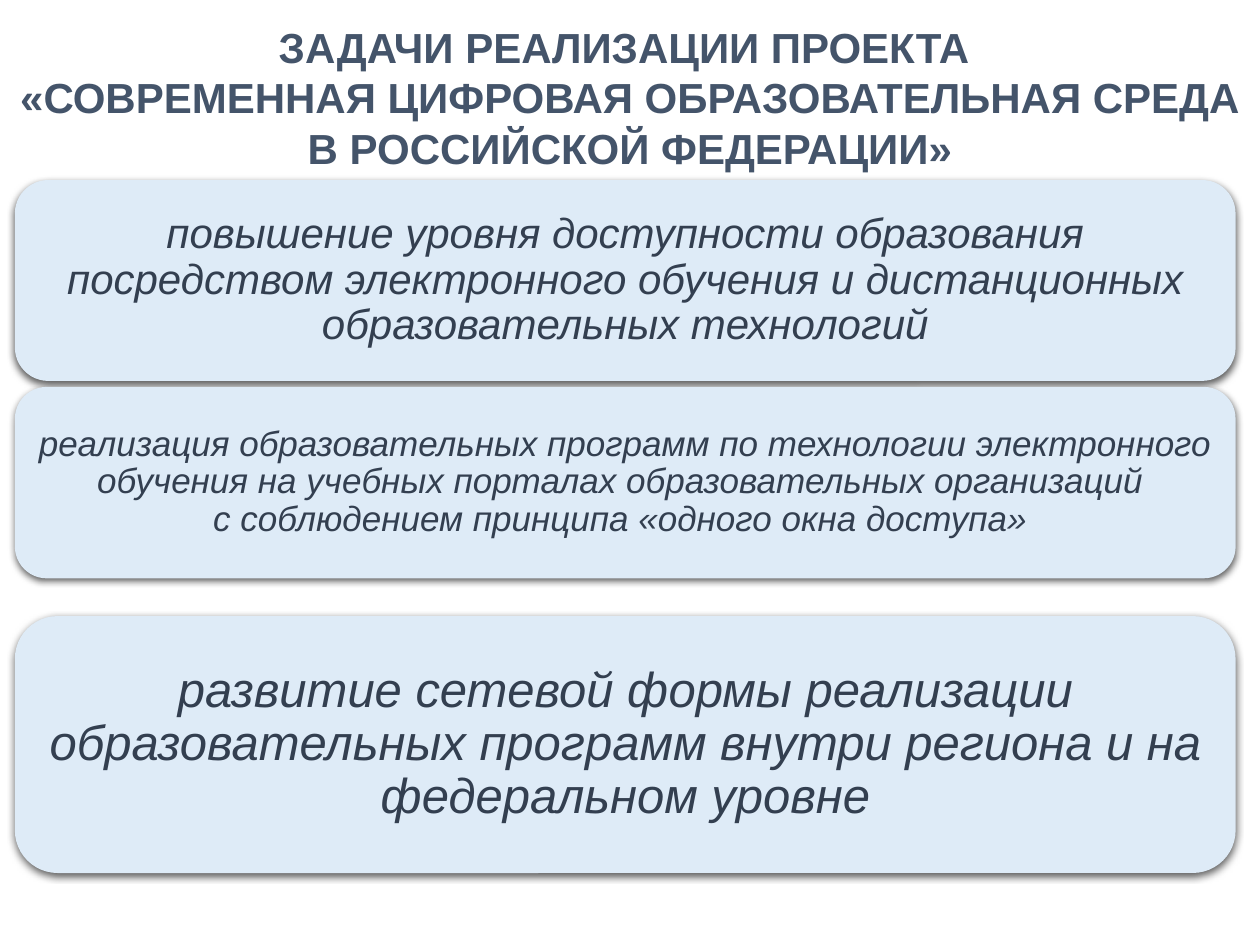
from copy import deepcopy

from lxml.etree import SubElement
from pptx import Presentation
from pptx.dml.color import RGBColor
from pptx.enum.shapes import MSO_SHAPE
from pptx.enum.text import MSO_ANCHOR, MSO_AUTO_SIZE, PP_ALIGN
from pptx.oxml.ns import qn
from pptx.util import Cm, Pt


def write(shape, text, size, color, bold=False, italic=False, inset=0.25,
          spacing=1.0, anchor=MSO_ANCHOR.MIDDLE):
    """Fill a shape with one centred paragraph; a vertical tab breaks a line."""
    frame = shape.text_frame
    frame.word_wrap = True
    frame.vertical_anchor = anchor
    frame.margin_left = frame.margin_right = Cm(inset)
    frame.margin_top = frame.margin_bottom = Cm(min(inset, 0.3))
    para = frame.paragraphs[0]
    para.text = text
    para.alignment = PP_ALIGN.CENTER
    para.line_spacing = spacing
    for run in para.runs:
        font = run.font
        font.name, font.size = "Arial", Pt(size)
        font.bold, font.italic = bold, italic
        font.color.rgb = RGBColor.from_string(color)
    # Line breaks need the same size as the text around them
    for mark in para._p.findall(qn("a:br")):
        mark.insert(0, deepcopy(para.runs[0]._r.rPr))


def add_shadow(shape):
    shape.shadow.inherit = False
    effects = shape._element.spPr.find(qn("a:effectLst"))
    outer = SubElement(effects, qn("a:outerShdw"), blurRad=str(Pt(4.5)),
                       dist=str(Pt(1.5)), dir="5400000", algn="ctr",
                       rotWithShape="0")
    black = SubElement(outer, qn("a:srgbClr"), val="000000")
    SubElement(black, qn("a:alpha"), val="63000")


deck = Presentation()
deck.slide_width, deck.slide_height = Cm(25.4), Cm(19.05)
slide = deck.slides.add_slide(deck.slide_layouts[5])

title = slide.shapes.title
title.left, title.top = Cm(0), Cm(0.3)
title.width, title.height = Cm(25.4), Cm(3.33)
write(title, "ЗАДАЧИ РЕАЛИЗАЦИИ ПРОЕКТА \v«СОВРЕМЕННАЯ ЦИФРОВАЯ "
      "ОБРАЗОВАТЕЛЬНАЯ СРЕДА В РОССИЙСКОЙ ФЕДЕРАЦИИ»",
      24, "44546A", bold=True, inset=0.25, anchor=MSO_ANCHOR.TOP)
title.text_frame.margin_top = title.text_frame.margin_bottom = Cm(0.13)
title.text_frame.auto_size = MSO_AUTO_SIZE.SHAPE_TO_FIT_TEXT

# Top, height, text size, inset, text
tasks = [
    (3.63, 4.05, 24, 0.25,
     "повышение уровня доступности образования посредством электронного "
     "обучения и дистанционных образовательных технологий"),
    (7.8, 3.86, 20, 0.21,
     "реализация образовательных программ по технологии электронного "
     "обучения на учебных порталах образовательных организаций "
     "\vс соблюдением принципа «одного окна доступа» "),
    (12.42, 5.18, 28, 0.3,
     "развитие сетевой формы реализации образовательных программ "
     "внутри региона и на федеральном уровне"),
]
for top, height, size, inset, text in tasks:
    card = slide.shapes.add_shape(MSO_SHAPE.ROUNDED_RECTANGLE, Cm(0.3),
                                  Cm(top), Cm(24.61), Cm(height))
    card.fill.solid()
    card.fill.fore_color.rgb = RGBColor.from_string("DEEBF7")
    card.line.fill.background()
    add_shadow(card)
    write(card, text, size, "333F50", italic=True, inset=inset, spacing=0.9)

deck.save("out.pptx")
